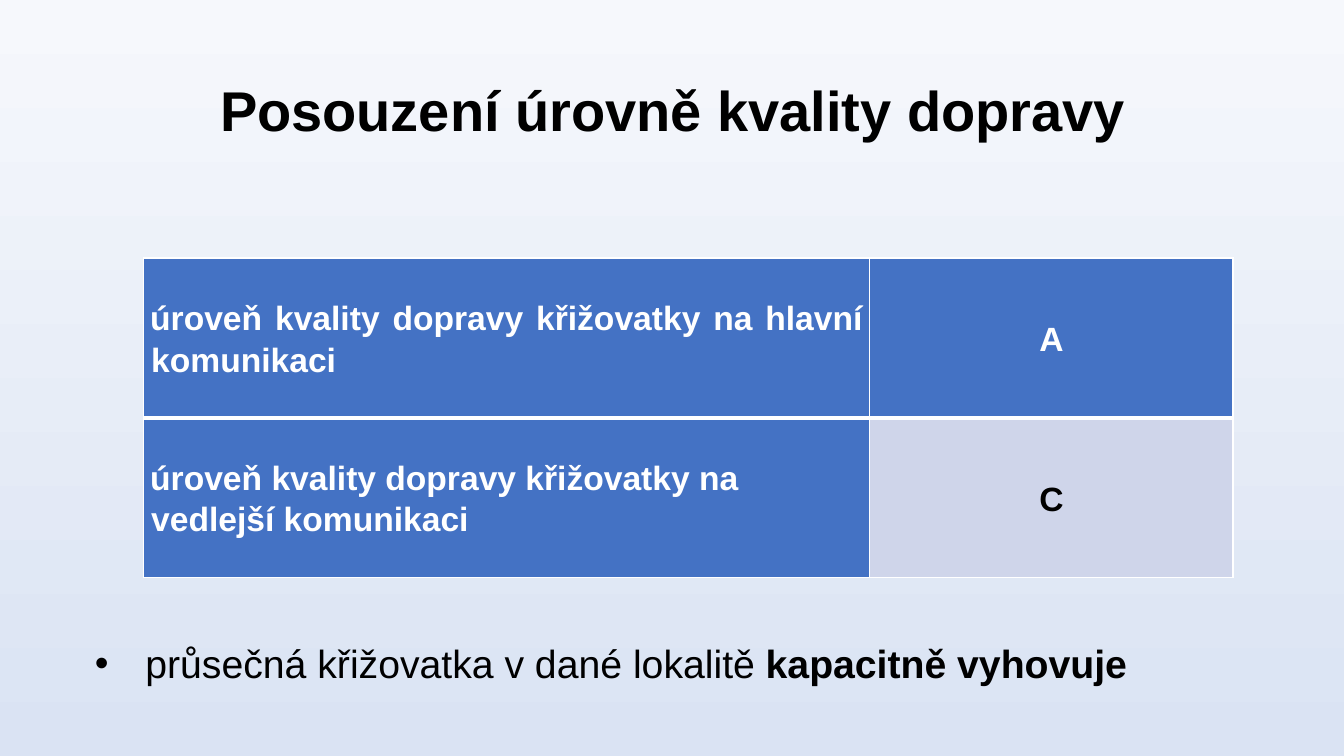
from lxml import etree
from pptx import Presentation
from pptx import util as u
from pptx.dml import color
from pptx.enum import text
from pptx.oxml import ns

BACKGROUND_TOP = color.RGBColor(0xF6, 0xF8, 0xFC)
BACKGROUND_BOTTOM = color.RGBColor(0xDA, 0xE3, 0xF3)
BLUE = color.RGBColor(0x44, 0x72, 0xC4)
PALE_BLUE = color.RGBColor(0xCF, 0xD5, 0xEA)
WHITE = color.RGBColor(0xFF, 0xFF, 0xFF)
BLACK = color.RGBColor(0, 0, 0)

LEFT = text.PP_ALIGN.LEFT
CENTER = text.PP_ALIGN.CENTER
JUSTIFY = text.PP_ALIGN.JUSTIFY

QUALITY_ROWS = [
    [("úroveň kvality dopravy křižovatky na hlavní komunikaci", JUSTIFY, BLUE, WHITE),
     ("A", CENTER, BLUE, WHITE)],
    [("úroveň kvality dopravy křižovatky na vedlejší komunikaci", LEFT, BLUE, WHITE),
     ("C", CENTER, PALE_BLUE, BLACK)],
]


def paint_background(slide):
    fill = slide.background.fill
    fill.gradient()
    fill.gradient_angle = 270
    for stop, shade in zip(fill.gradient_stops, (BACKGROUND_TOP, BACKGROUND_BOTTOM)):
        stop.color.rgb = shade


def add_run(paragraph, words, size, ink, bold):
    run = paragraph.add_run()
    run.text = words
    run.font.name = "Arial"
    run.font.size = u.Pt(size)
    run.font.bold = bold
    run.font.color.rgb = ink


def set_indent(paragraph, indent):
    properties = paragraph._p.get_or_add_pPr()
    properties.set("marL", str(u.Inches(indent)))
    properties.set("indent", str(-u.Inches(indent)))
    return properties


def add_centred_line(slide, box, size, runs, bullet=False):
    shape = slide.shapes.add_textbox(*map(u.Inches, box))
    frame = shape.text_frame
    frame.word_wrap = True
    frame.vertical_anchor = text.MSO_ANCHOR.MIDDLE
    paragraph = frame.paragraphs[0]
    if bullet:
        properties = set_indent(paragraph, 0.5)
        etree.SubElement(properties, ns.qn("a:buFont"), typeface="Arial")
        etree.SubElement(properties, ns.qn("a:buChar"), char="•")
    paragraph.alignment = CENTER
    paragraph.line_spacing = 0.9
    for words, bold in runs:
        add_run(paragraph, words, size, BLACK, bold)


def set_borders(cell, widths):
    properties = cell._tc.get_or_add_tcPr()
    for position, (side, width) in enumerate(widths.items()):
        line = etree.Element(ns.qn(f"a:ln{side}"), w=str(u.Pt(width)))
        fill = etree.SubElement(line, ns.qn("a:solidFill"))
        etree.SubElement(fill, ns.qn("a:srgbClr"), val=str(WHITE))
        properties.insert(position, line)


def fill_cell(cell, words, alignment, shade, ink):
    cell.fill.solid()
    cell.fill.fore_color.rgb = shade
    cell.vertical_anchor = text.MSO_ANCHOR.MIDDLE
    cell.margin_left = cell.margin_right = u.Inches(0.07)
    cell.margin_top = cell.margin_bottom = 0
    paragraph = cell.text_frame.paragraphs[0]
    set_indent(paragraph, 0.01)
    paragraph.alignment = alignment
    paragraph.line_spacing = 1.1
    paragraph.space_after = u.Pt(0.2)
    add_run(paragraph, words, 24, ink, True)


def add_quality_table(slide, box):
    left, top, width, height = map(u.Inches, box)
    row_count = len(QUALITY_ROWS)
    table = slide.shapes.add_table(row_count, 2, left, top, width, height).table
    table.columns[0].width = width * 2 // 3
    table.columns[1].width = width - table.columns[0].width
    for row_index, row in enumerate(QUALITY_ROWS):
        for column_index, content in enumerate(row):
            cell = table.cell(row_index, column_index)
            fill_cell(cell, *content)
            set_borders(cell, {
                "L": 1,
                "R": 1,
                "T": 1 if row_index == 0 else 3,
                "B": 1 if row_index == row_count - 1 else 3,
            })


def main():
    presentation = Presentation()
    presentation.slide_width = u.Inches(13.33)
    presentation.slide_height = u.Inches(7.5)
    slide = presentation.slides.add_slide(presentation.slide_layouts[6])
    paint_background(slide)
    add_centred_line(slide, (0.92, 0.4, 11.5, 1.45), 40,
                     [("Posouzení úrovně kvality dopravy", True)])
    add_quality_table(slide, (1.42, 2.56, 10.81, 3.17))
    add_centred_line(slide, (0.31, 5.88, 11.5, 1.45), 28,
                     [("průsečná křižovatka v dané lokalitě ", False),
                      ("kapacitně vyhovuje", True)], bullet=True)
    presentation.save("out.pptx")


if __name__ == "__main__":
    main()
